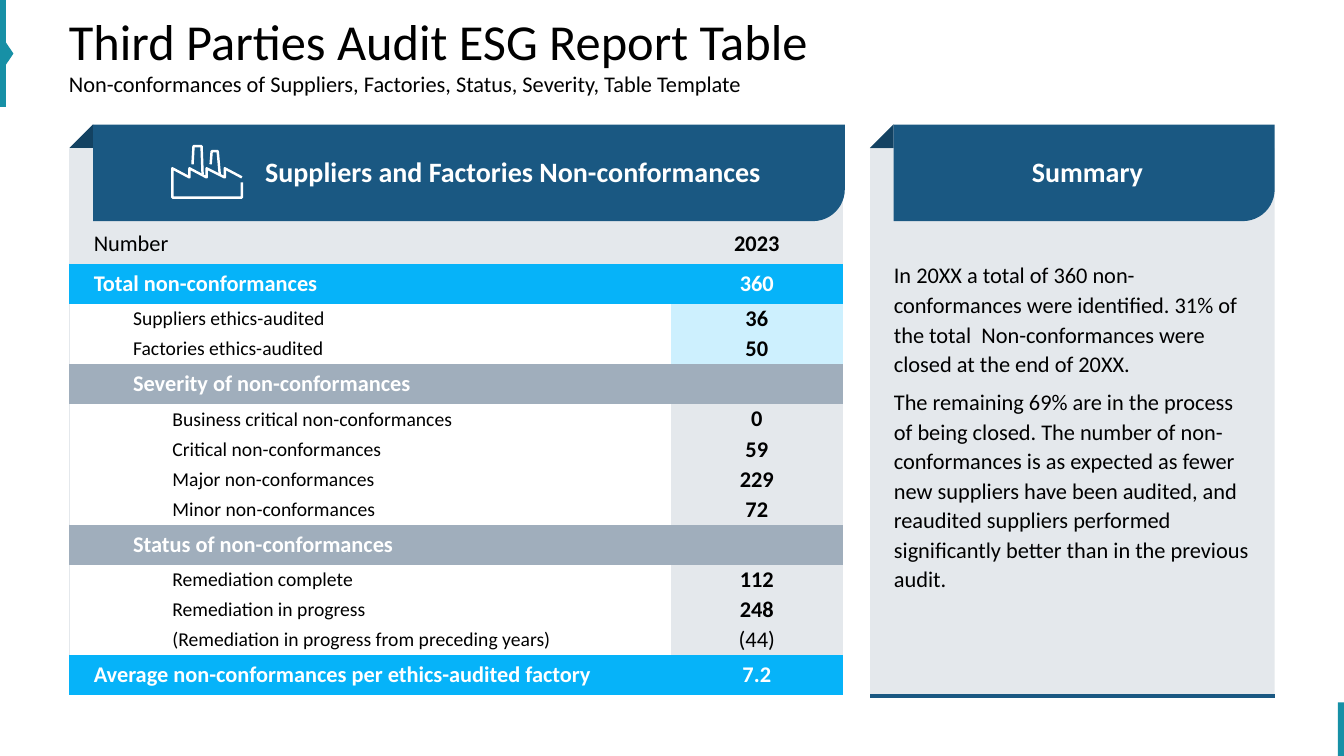
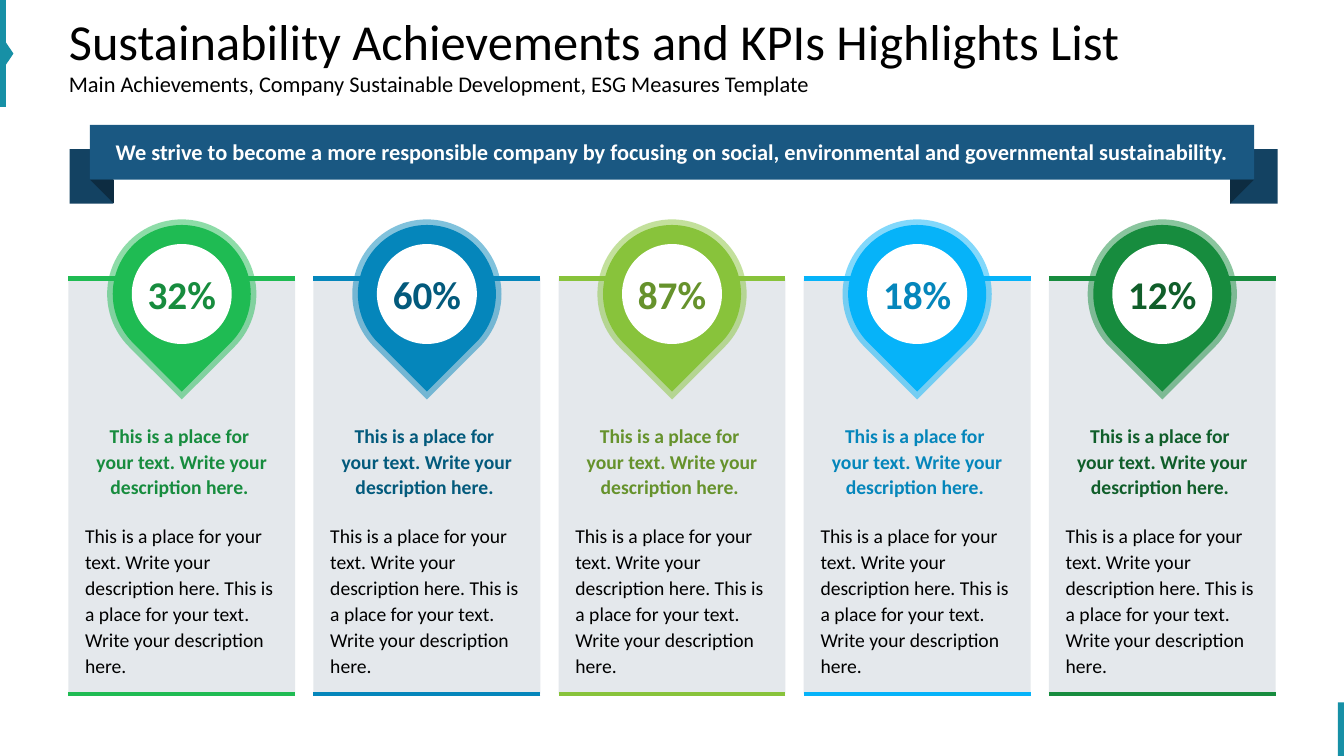
"""Build two ESG slides: a non-conformance audit table and a list of KPI highlights."""
from pptx import Presentation
from pptx.dml.color import RGBColor
from pptx.enum.shapes import MSO_CONNECTOR, MSO_SHAPE as SHAPE
from pptx.enum.text import MSO_ANCHOR as ANCHOR, MSO_AUTO_SIZE, PP_ALIGN as ALIGN
from pptx.oxml.ns import qn
from pptx.util import Pt
from lxml.etree import SubElement

FONT = "Calibri"
BLACK, WHITE = "000000", "FFFFFF"
PALE, GREY = "E4E8EC", "A0AEBC"
TEAL, SKY, ICE = "1790A6", "06B3F9", "CDF0FE"
NAVY, DARK_NAVY, FOLD_NAVY = "1A5882", "134262", "0D2C41"
NO_STYLE_TABLE = "{2D5ABB26-0587-4C30-8999-92F81FD0307C}"
rgb = RGBColor.from_string


def add_box(slide, kind, left, top, width, height, fill=None, line=None, line_width=3, rotation=0):
    shape = slide.shapes.add_shape(kind, Pt(left), Pt(top), Pt(width), Pt(height))
    shape.shadow.inherit = False
    shape.rotation = rotation
    if fill:
        shape.fill.solid()
        shape.fill.fore_color.rgb = rgb(fill)
    else:
        shape.fill.background()
    if line:
        shape.line.color.rgb = rgb(line)
        shape.line.width = Pt(line_width)
    else:
        shape.line.fill.background()
    return shape


def write(frame, text, size, color, bold=False, align=ALIGN.LEFT, margins=None,
          anchor=ANCHOR.MIDDLE, line_spacing=None, space_after=0):
    frame.text = text
    if margins:
        frame.word_wrap = True
        frame.vertical_anchor = anchor
        frame.margin_left = frame.margin_right = Pt(margins[0])
        frame.margin_top, frame.margin_bottom = Pt(margins[1]), Pt(margins[2])
    for paragraph in frame.paragraphs:
        paragraph.alignment = align
        paragraph.line_spacing = line_spacing
        paragraph.space_after = Pt(space_after)
        paragraph.font.name = FONT
        paragraph.font.size = Pt(size)
        paragraph.font.bold = bold
        paragraph.font.color.rgb = rgb(color)


presentation = Presentation()
presentation.slide_width, presentation.slide_height = Pt(960), Pt(540)
layout = presentation.slide_layouts[5]

titles = [
    ("Third Parties Audit ESG Report Table",
     "Non-conformances of Suppliers, Factories, Status, Severity, Table Template"),
    ("Sustainability Achievements and KPIs Highlights List",
     "Main Achievements, Company Sustainable Development, ESG Measures Template"),
]
slides = []
for heading, subheading in titles:
    slide = presentation.slides.add_slide(layout)
    title = slide.shapes.title
    title.left, title.top, title.width, title.height = Pt(49.2), Pt(0), Pt(862), Pt(76.3)
    frame = title.text_frame
    frame.auto_size = MSO_AUTO_SIZE.NONE
    frame.word_wrap = True
    frame.vertical_anchor = ANCHOR.MIDDLE
    frame.margin_left, frame.margin_right = Pt(0), Pt(7.2)
    frame.margin_top = frame.margin_bottom = Pt(3.6)
    paragraph = frame.paragraphs[0]
    paragraph.alignment = ALIGN.LEFT
    paragraph.line_spacing = 1.0
    paragraph.font.name = FONT
    paragraph.font.color.rgb = rgb(BLACK)
    run = paragraph.add_run()
    run.text, run.font.size = heading, Pt(36)
    paragraph.add_line_break()
    run = paragraph.add_run()
    run.text, run.font.size = subheading, Pt(16)
    slides.append(slide)
audit_slide, kpi_slide = slides

edge_marks = [
    (SHAPE.RECTANGLE, 0, 0, 4.3, 76.3, 0),
    (SHAPE.ISOSCELES_TRIANGLE, -5.8, 34.4, 23, 7.8, 90),
    (SHAPE.RECTANGLE, 955.6, 501.8, 4.4, 38.2, 0),
]
for kind, left, top, width, height, rotation in edge_marks:
    mark = add_box(audit_slide, kind, left, top, width, height, TEAL, rotation=rotation)
    layout.shapes.element.append(mark.element)

row_styles = {
    "blank": (53.5, 0, 16, BLACK, False, PALE, PALE),
    "header": (28.7, 17.3, 16, BLACK, False, PALE, PALE),
    "total": (28.7, 17.3, 16, WHITE, True, SKY, SKY),
    "section": (28.7, 45.4, 16, WHITE, True, GREY, GREY),
    "audited": (21.5, 45.4, 14, BLACK, False, None, ICE),
    "detail": (21.5, 73.5, 14, BLACK, False, None, PALE),
}
rows = [
    ("blank", "", ""),
    ("header", "Number", "2023"),
    ("total", "Total non-conformances", "360"),
    ("audited", "Suppliers ethics-audited", "36"),
    ("audited", "Factories ethics-audited", "50"),
    ("section", "Severity of non-conformances", ""),
    ("detail", "Business critical non-conformances", "0"),
    ("detail", "Critical non-conformances", "59"),
    ("detail", "Major non-conformances", "229"),
    ("detail", "Minor non-conformances", "72"),
    ("section", "Status of non-conformances", ""),
    ("detail", "Remediation complete", "112"),
    ("detail", "Remediation in progress", "248"),
    ("detail", "(Remediation in progress from preceding years)", "(44)"),
    ("total", "Average non-conformances per ethics-audited factory", "7.2"),
]
table_height = sum(row_styles[style][0] for style, _, _ in rows)
table = audit_slide.shapes.add_table(
    len(rows), 2, Pt(49.7), Pt(106.2), Pt(552.5), Pt(table_height)).table
table.first_row = table.horz_banding = False
table._tbl.tblPr.find(qn("a:tableStyleId")).text = NO_STYLE_TABLE
table.columns[0].width, table.columns[1].width = Pt(429.3), Pt(123.2)
for row_index, (style, label, value) in enumerate(rows):
    height, indent, size, color, bold, label_fill, value_fill = row_styles[style]
    table.rows[row_index].height = Pt(height)
    label_cell, value_cell = table.cell(row_index, 0), table.cell(row_index, 1)
    for cell, fill in ((label_cell, label_fill), (value_cell, value_fill)):
        cell.margin_left = cell.margin_right = cell.margin_top = cell.margin_bottom = Pt(0)
        cell.vertical_anchor = ANCHOR.MIDDLE
        if fill:
            cell.fill.solid()
            cell.fill.fore_color.rgb = rgb(fill)
        else:
            cell.fill.background()
    label_cell.margin_left = Pt(indent)
    write(label_cell.text_frame, label, size, color, bold)
    write(value_cell.text_frame, value, 16, color, value != "(44)", ALIGN.CENTER)
    properties = label_cell._tc.get_or_add_tcPr()
    border = SubElement(properties, qn("a:lnL"), w=str(Pt(1.5)))
    border_fill = SubElement(border, qn("a:solidFill"))
    SubElement(border_fill, qn("a:srgbClr"), val=label_fill or PALE)
    properties.insert(0, border)

summary = (
    "In 20XX a total of 360 non-conformances were identified. 31% of the total  "
    "Non-conformances were closed at the end of 20XX.\n"
    "The remaining 69% are in the process of being closed. The number of non-conformances "
    "is as expected as fewer new suppliers have been audited, and reaudited suppliers "
    "performed significantly better than in the previous audit.")
panel = add_box(audit_slide, SHAPE.RECTANGLE, 621.5, 106, 289, 391, PALE)
write(panel.text_frame, summary, 16, BLACK, margins=(17, 79, 3), anchor=ANCHOR.TOP,
      line_spacing=1.1, space_after=6)
baseline = audit_slide.shapes.add_connector(
    MSO_CONNECTOR.STRAIGHT, Pt(621.5), Pt(497), Pt(910.5), Pt(497))
baseline.line.color.rgb = rgb(NAVY)
baseline.line.width = Pt(3)
SubElement(baseline.element.spPr, qn("a:effectLst"))

headers = [
    (49.5, 554, "Suppliers and Factories Non-conformances", 189.4, 375, ALIGN.LEFT),
    (621.3, 289.2, "Summary", 660.3, 233, ALIGN.CENTER),
]
for left, width, text, text_left, text_width, align in headers:
    add_box(audit_slide, SHAPE.RIGHT_TRIANGLE, left, 88.8, 17, 17, DARK_NAVY, rotation=270)
    banner = add_box(audit_slide, SHAPE.ROUND_1_RECTANGLE, left + 17, 89, width - 17, 69, NAVY)
    banner.adjustments[0] = 0.33
    banner.element.spPr.find(qn("a:xfrm")).set("flipV", "1")
    label = audit_slide.shapes.add_textbox(Pt(text_left), Pt(97.2), Pt(text_width), Pt(52.6))
    write(label.text_frame, text, 20, WHITE, True, align, (0, 5.8, 8.6), space_after=4)

factory_outlines = [
    [(240, 181), (240, 196), (171, 196), (171, 167), (188, 176), (188, 167), (205, 176),
     (205, 167), (223, 176), (223, 167), (240, 176)],
    [(218, 173), (216, 150), (210, 150), (209, 163)],
    [(201, 173), (200, 145), (192, 145), (191, 163)],
]
builder = audit_slide.shapes.build_freeform(*factory_outlines[0][0], scale=Pt(0.72))
for outline in factory_outlines:
    builder.move_to(*outline[0])
    builder.add_line_segments(outline[1:], close=False)
factory = builder.convert_to_shape()
factory.shadow.inherit = False
factory.fill.background()
factory.line.color.rgb = rgb(WHITE)
factory.line.width = Pt(1.75)

kpis = [
    ("32%", "1FBB53", "178C3E"),
    ("60%", "0586BB", "035A7C"),
    ("87%", "88C33B", "66922C"),
    ("18%", "06B3F9", "0586BB"),
    ("12%", "178C3E", "105E2A"),
]
sentence = "This is a place for your text. Write your description here."
highlight = "This is a place for \vyour text. Write your description here. "
card_width, card_height, card_middle, card_pitch = 162, 296.6, 347.2, 175.1
pin_middle, pin_size, disc_size = 210, 98.6, 71.4
text_width = 160.6
for index, (percent, color, dark_color) in enumerate(kpis):
    center = 129.8 + index * card_pitch
    card = add_box(kpi_slide, SHAPE.DOUBLE_BRACKET, center - card_height / 2,
                   card_middle - card_width / 2, card_height, card_width, PALE, color, rotation=90)
    card.adjustments[0] = 0
    pin = add_box(kpi_slide, SHAPE.TEAR, center - pin_size / 2, pin_middle - pin_size / 2,
                  pin_size, pin_size, color, color, 8, rotation=135)
    outline = pin.element.spPr.find(qn("a:ln"))
    SubElement(outline.find(".//" + qn("a:srgbClr")), qn("a:alpha"), val="50000")
    SubElement(outline, qn("a:miter"), lim="800000")
    disc = add_box(kpi_slide, SHAPE.OVAL, center - disc_size / 2, pin_middle - disc_size / 2,
                   disc_size, disc_size, WHITE)
    write(disc.text_frame, percent, 28, dark_color, True, ALIGN.CENTER, (0, 0, 0))
    texts = [
        (367.2, 122.4, f"{sentence} {sentence}", BLACK, False, ALIGN.LEFT, ANCHOR.TOP),
        (295.5, 66.2, highlight, dark_color, True, ALIGN.CENTER, ANCHOR.MIDDLE),
    ]
    for top, height, text, text_color, bold, align, anchor in texts:
        box = kpi_slide.shapes.add_textbox(
            Pt(center - text_width / 2), Pt(top), Pt(text_width), Pt(height))
        write(box.text_frame, text, 14, text_color, bold, align, (11.3, 5.7, 5.7), anchor, 1.1, 6)

for left, width in ((878.7, 34), (49.7, 31)):
    add_box(kpi_slide, SHAPE.RECTANGLE, left, 106.5, width, 39, DARK_NAVY)
ribbon = add_box(kpi_slide, SHAPE.RECTANGLE, 64.2, 89.3, 831.6, 39, NAVY)
write(ribbon.text_frame,
      "We strive to become a more responsible company by focusing on social, "
      "environmental and governmental sustainability.",
      16, WHITE, True, ALIGN.CENTER, (0, 3.6, 3.6), line_spacing=Pt(18.2))
for left, rotation in ((878.6, 90), (64.2, 180)):
    add_box(kpi_slide, SHAPE.RIGHT_TRIANGLE, left, 128.3, 17.2, 17.2, FOLD_NAVY, rotation=rotation)

presentation.save("out.pptx")
